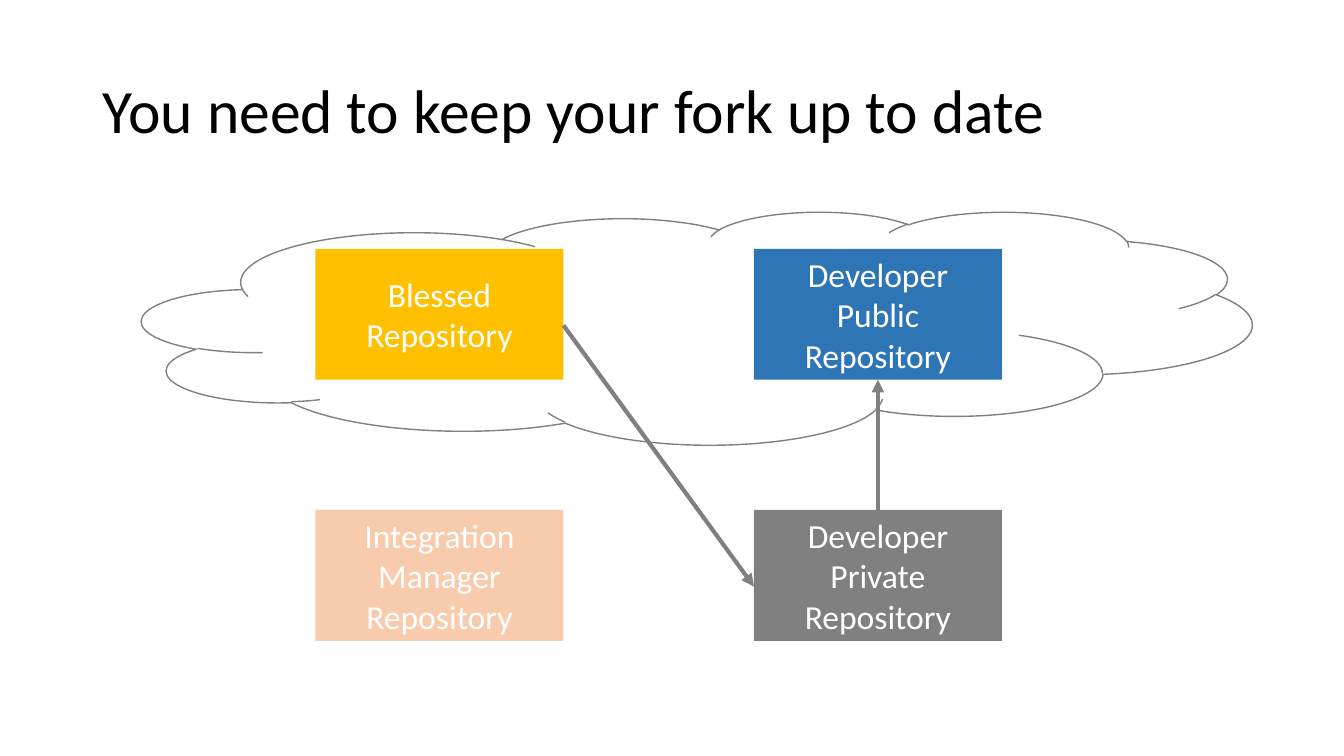
from lxml import etree
from pptx import Presentation
from pptx import util as u
from pptx.dml.color import RGBColor
from pptx.enum import shapes, text
from pptx.oxml.ns import qn

COLORS = {
    "text": "000000",
    "label": "FFFFFF",
    "outline": "808080",
    "blessed": "FFC000",
    "public": "2E75B6",
    "private": "808080",
    "manager": "F8CBAD",
}
FONT = "Calibri"

BOX_WIDTH, BOX_HEIGHT = 6.25, 3.3
COLUMNS = (7.95, 19)
ROWS = (6.27, 12.85)
ARROW_DROP = 1.93  # from the top of a box to the sloping arrow's end


class ForkSlide:
    def __init__(self, presentation):
        self.slide = presentation.slides.add_slide(presentation.slide_layouts[5])

    def color(self, name):
        return RGBColor.from_string(COLORS[name])

    def style_text(self, paragraph, size, color, alignment):
        paragraph.alignment = alignment
        paragraph.font.name = FONT
        paragraph.font.size = u.Pt(size)
        paragraph.font.color.rgb = self.color(color)

    def title(self, wording, left, top, width, height):
        title = self.slide.shapes.title
        title.left, title.top = u.Cm(left), u.Cm(top)
        title.width, title.height = u.Cm(width), u.Cm(height)
        frame = title.text_frame
        frame.text = wording
        frame.auto_size = text.MSO_AUTO_SIZE.NONE
        frame.vertical_anchor = text.MSO_ANCHOR.MIDDLE
        paragraph = frame.paragraphs[0]
        paragraph.line_spacing = 0.9
        self.style_text(paragraph, 44, "text", text.PP_ALIGN.LEFT)

    def shape(self, kind, left, top, width, height):
        shape = self.slide.shapes.add_shape(
            kind, u.Cm(left), u.Cm(top), u.Cm(width), u.Cm(height))
        shape.shadow.inherit = False
        return shape

    def cloud(self, left, top, width, height):
        cloud = self.shape(shapes.MSO_SHAPE.CLOUD, left, top, width, height)
        cloud.fill.background()
        cloud.line.color.rgb = self.color("outline")
        cloud.line.width = u.Pt(1)

    def repository(self, label, fill, column, row):
        box = self.shape(shapes.MSO_SHAPE.RECTANGLE, COLUMNS[column], ROWS[row],
                         BOX_WIDTH, BOX_HEIGHT)
        box.fill.solid()
        box.fill.fore_color.rgb = self.color(fill)
        box.line.fill.background()
        frame = box.text_frame
        frame.text = label
        frame.word_wrap = True
        frame.vertical_anchor = text.MSO_ANCHOR.MIDDLE
        self.style_text(frame.paragraphs[0], 24, "label", text.PP_ALIGN.CENTER)
        return box

    def arrow(self, start=(0, 0), end=(0, 0)):
        points = [u.Cm(value) for value in (*start, *end)]
        arrow = self.slide.shapes.add_connector(
            shapes.MSO_CONNECTOR.STRAIGHT, *points)
        arrow.line.color.rgb = self.color("outline")
        arrow.line.width = u.Pt(3)
        etree.SubElement(arrow.line._get_or_add_ln(), qn("a:tailEnd"), type="triangle")
        etree.SubElement(arrow._element.spPr, qn("a:effectLst"))
        return arrow


def main():
    presentation = Presentation()
    presentation.slide_width = u.Cm(33.87)
    presentation.slide_height = u.Cm(19.05)

    fork = ForkSlide(presentation)
    fork.title("You need to keep your fork up to date", 2.34, 1.02, 29.21, 3.68)
    fork.cloud(3.58, 5.33, 27.97, 5.87)

    public = fork.repository("Developer Public Repository", "public", 1, 0)
    private = fork.repository("Developer Private Repository", "private", 1, 1)
    fork.repository("Integration Manager Repository", "manager", 0, 1)
    fork.repository("Blessed Repository", "blessed", 0, 0)

    fork.arrow((COLUMNS[0] + BOX_WIDTH, ROWS[0] + ARROW_DROP),
               (COLUMNS[1], ROWS[1] + ARROW_DROP))
    push = fork.arrow()
    push.begin_connect(private, 0)
    push.end_connect(public, 2)

    presentation.save("out.pptx")


if __name__ == "__main__":
    main()
